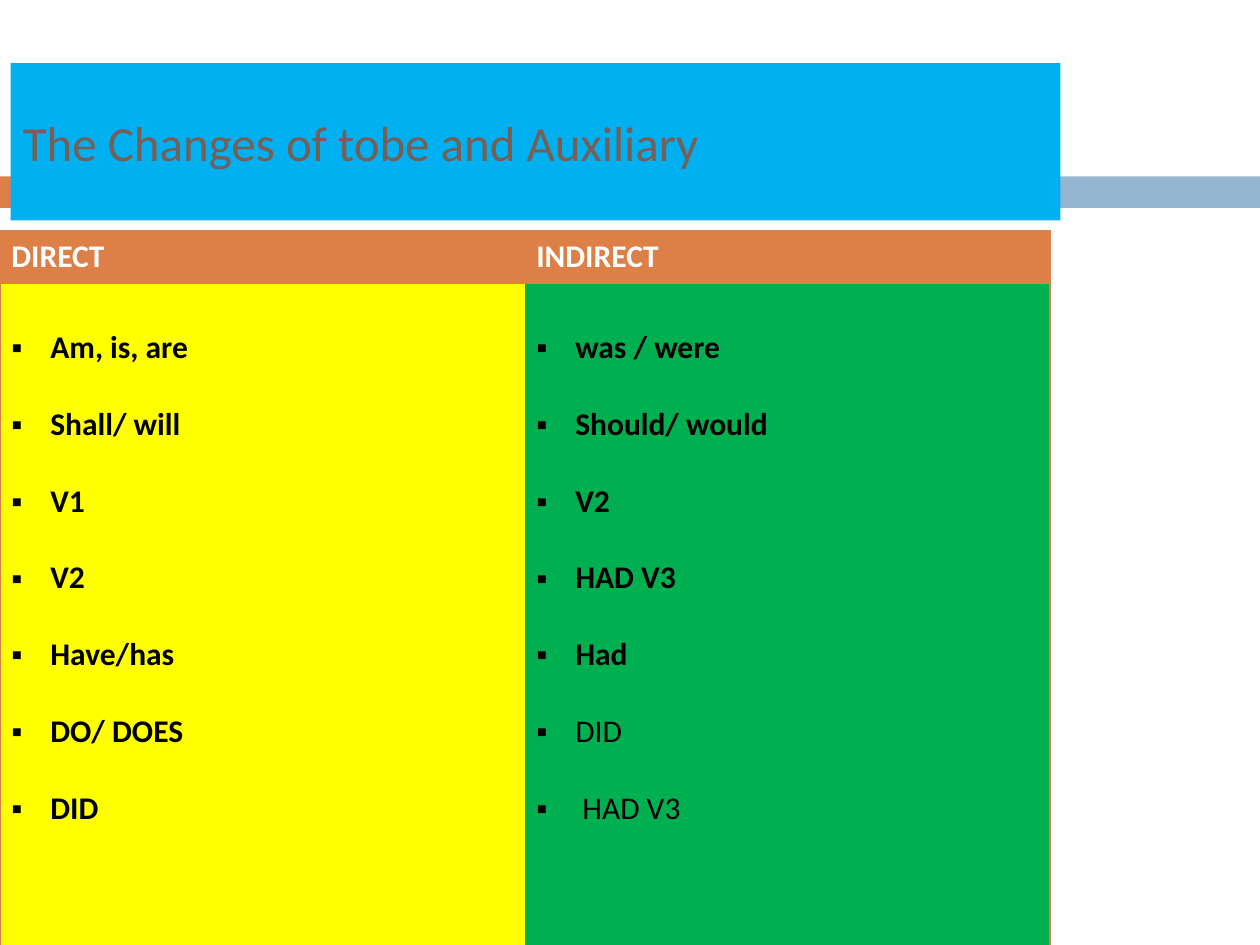
from pptx import Presentation
from pptx.dml.color import RGBColor as Rgb
from pptx.enum.shapes import MSO_SHAPE as Shape
from pptx.enum.text import MSO_ANCHOR as Anchor, PP_ALIGN as Align
from pptx.oxml import parse_xml
from pptx.oxml.ns import nsdecls
from pptx.util import Inches, Pt

COLS, ROWS = 24, 18
ORANGE, BLUE, SKY = "DD8047", "94B6D2", "00B0F0"
YELLOW, GREEN = "FFFF00", "00B050"
BROWN, WHITE, BLACK = "775F55", "FFFFFF", "000000"

HEADS = ["DIRECT", "INDIRECT"]
FORMS = [
    ("Am, is, are", "was / were"),
    ("Shall/ will", "Should/ would"),
    ("V1", "V2"),
    ("V2", "HAD V3"),
    ("Have/has", "Had"),
    ("DO/ DOES", "DID"),
    ("DID", " HAD V3"),
]
PLAIN = 5  # from this row on, the indirect forms are not bold


def paint(part, color):
    part.fill.solid()
    part.fill.fore_color.rgb = Rgb.from_string(color)


def write(par, text, size=18, color=BLACK, bold=False, mark=None, gap=None):
    par.alignment = Align.LEFT
    if gap:
        par.line_spacing = gap
    if mark:
        props = par._p.get_or_add_pPr()
        props.set("marL", str(Inches(0.31)))
        props.set("indent", str(-Inches(0.31)))
        props.append(parse_xml(f'<a:buFont {nsdecls("a")} typeface="Arial"/>'))
        props.append(parse_xml(f'<a:buChar {nsdecls("a")} char="{mark}"/>'))
    run = par.add_run()
    run.text = text
    font = run.font
    font.name, font.size, font.bold = "Calibri", Pt(size), bold
    font.color.rgb = Rgb.from_string(color)


class Deck:
    def __init__(self):
        self.file = Presentation()
        self.file.slide_width, self.file.slide_height = Inches(10), Inches(7.5)
        self.slide = self.file.slides.add_slide(self.file.slide_layouts[6])

    def x(self, cols):
        return round(self.file.slide_width * cols / COLS)

    def y(self, rows):
        return round(self.file.slide_height * rows / ROWS)

    def place(self, left, top, width, height):
        return self.x(left), self.y(top), self.x(width), self.y(height)

    def box(self, area, color):
        shape = self.slide.shapes.add_shape(Shape.RECTANGLE, *self.place(*area))
        shape.shadow.inherit = False
        shape.line.fill.background()
        paint(shape, color)
        return shape

    def title(self, area, text):
        frame = self.box(area, SKY).text_frame
        frame.word_wrap = True
        frame.vertical_anchor = Anchor.MIDDLE
        write(frame.paragraphs[0], text, size=28, color=BROWN)

    def table(self, area, head):
        left, top, width, height = area
        grid = self.slide.shapes.add_table(2, 2, *self.place(*area)).table
        for col in grid.columns:
            col.width = self.x(width / 2)
        grid.rows[0].height = self.y(head)
        grid.rows[1].height = self.y(height - head)
        return grid

    def cell(self, cell, color, sides):
        cell.margin_left = cell.margin_right = Inches(0.09)
        cell.margin_top = cell.margin_bottom = Inches(0.05)
        paint(cell, color)
        props = cell._tc.get_or_add_tcPr()
        for spot, side in enumerate("LRTB"):
            fill = (f'<a:solidFill><a:srgbClr val="{ORANGE}"/></a:solidFill>'
                    if side in sides else "<a:noFill/>")
            props.insert(spot, parse_xml(
                f'<a:ln{side} {nsdecls("a")} w="{Pt(0.79)}">{fill}</a:ln{side}>'))
        return cell.text_frame


def main():
    deck = Deck()

    # Band behind the title
    deck.box((0, 3.36, 1.4, 0.6), ORANGE)
    deck.box((1.56, 3.36, COLS - 1.56, 0.6), BLUE)

    # Title
    deck.title((0.2, 1.2, 20, 3), "The Changes of tobe and Auxiliary")

    # Table of direct and indirect forms
    grid = deck.table((0, 4.4, 20, 19.73), head=1)
    for col, (head, color, edge) in enumerate(zip(HEADS, (YELLOW, GREEN), "LR")):
        frame = deck.cell(grid.cell(0, col), ORANGE, edge + "T")
        write(frame.paragraphs[0], head, color=WHITE, bold=True)

        frame = deck.cell(grid.cell(1, col), color, edge + "TB")
        for row, pair in enumerate(FORMS):
            par = frame.add_paragraph() if row else frame.paragraphs[0]
            write(par, pair[col], bold=col == 0 or row < PLAIN, mark="▪", gap=2.0)

    deck.file.save("out.pptx")


if __name__ == "__main__":
    main()
